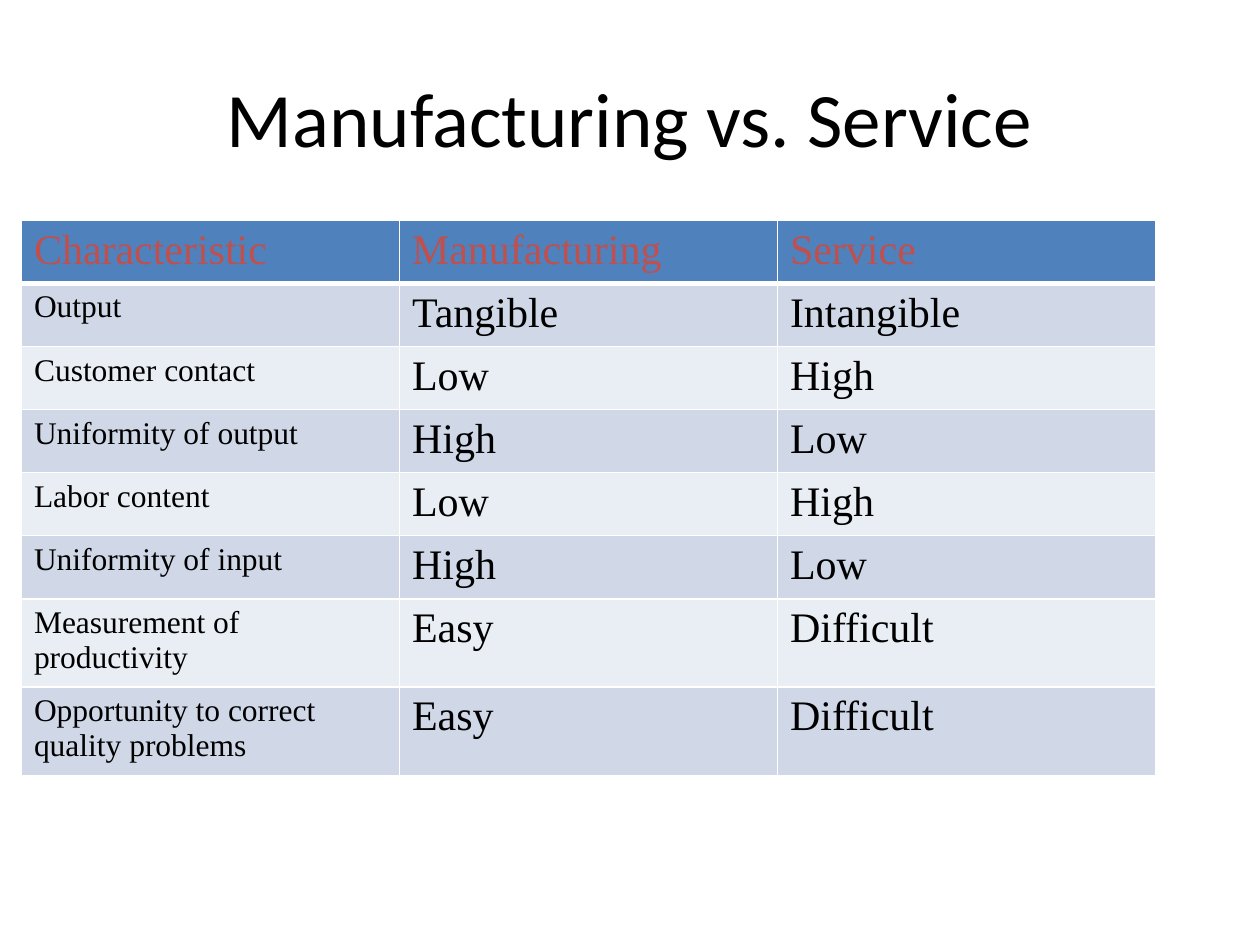
from lxml.etree import SubElement
from pptx import Presentation
from pptx.dml.color import RGBColor
from pptx.enum.text import MSO_ANCHOR, PP_ALIGN
from pptx.oxml.ns import qn
from pptx.util import Inches, Pt

WIDE, HIGH = 10, 7.5
ROWS = [
    ("Characteristic", "Manufacturing", "Service"),
    ("Output", "Tangible", "Intangible"),
    ("Customer contact", "Low", "High"),
    ("Uniformity of output", "High", "Low"),
    ("Labor content", "Low", "High"),
    ("Uniformity of input", "High", "Low"),
    ("Measurement of productivity", "Easy", "Difficult"),
    ("Opportunity to correct quality problems", "Easy", "Difficult"),
]


def color(code):
    return RGBColor.from_string(code)


class Deck:
    ink, accent, line = "000000", "C0504D", "FFFFFF"
    head, bands = "4F81BD", ("E9EDF4", "D0D8E8")
    sans, serif = "Calibri", "Times New Roman"

    def __init__(self):
        self.file = Presentation()
        self.file.slide_width, self.file.slide_height = Inches(WIDE), Inches(HIGH)
        self.slide = self.file.slides.add_slide(self.file.slide_layouts[6])

    def place(self, x, y, w, h):
        """Turn shares of the slide's size into lengths."""
        return [Inches(share * size) for share, size in zip((x, y, w, h), (WIDE, HIGH) * 2)]

    def label(self, frame, text, name, size, tint):
        para = frame.paragraphs[0]
        run = para.add_run()
        run.text = text
        for key, value in {"name": name, "size": Pt(size), "bold": False}.items():
            setattr(run.font, key, value)
        run.font.color.rgb = color(tint)
        return para

    def title(self, text, *area):
        frame = self.slide.shapes.add_textbox(*self.place(*area)).text_frame
        frame.word_wrap = True
        frame.vertical_anchor = MSO_ANCHOR.MIDDLE
        self.label(frame, text, self.sans, 44, self.ink).alignment = PP_ALIGN.CENTER

    def border(self, cell, widths):
        props = cell._tc.get_or_add_tcPr()
        for side, width in zip("LRTB", widths):
            edge = SubElement(props, qn(f"a:ln{side}"), w=str(Pt(width)))
            fill = SubElement(edge, qn("a:solidFill"))
            SubElement(fill, qn("a:srgbClr"), val=self.line)

    def table(self, rows, *area):
        grid = self.slide.shapes.add_table(len(rows), len(rows[0]), *self.place(*area)).table
        for r, row in enumerate(rows):
            for c, text in enumerate(row):
                cell = grid.cell(r, c)
                self.border(cell, (1, 1, 3 if r == 1 else 1, 3 if r == 0 else 1))
                cell.fill.solid()
                cell.fill.fore_color.rgb = color(self.bands[r % 2] if r else self.head)
                size = 18 if r and c == 0 else 24
                self.label(cell.text_frame, text, self.serif, size, self.ink if r else self.accent)


def main():
    deck = Deck()
    deck.title("Manufacturing vs. Service", 0.05, 0.04, 0.9, 1 / 6)
    deck.table(ROWS, 0.017, 7 / 30, 0.9, 0.44)
    deck.file.save("out.pptx")


if __name__ == "__main__":
    main()
